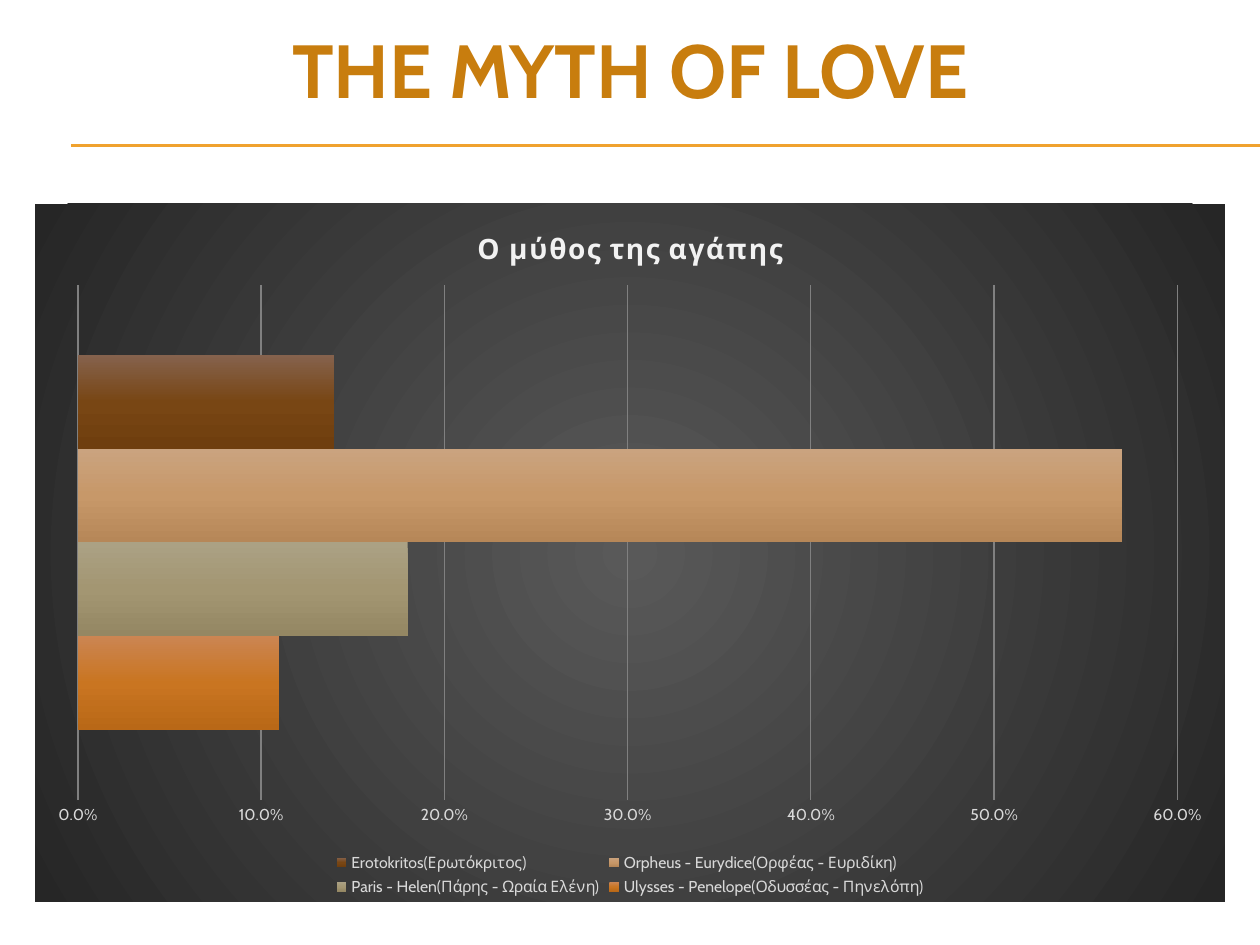
import pptx
import pptx.chart.data
import pptx.dml.color
import pptx.enum.chart
import pptx.enum.shapes
import pptx.enum.text
import pptx.oxml
import pptx.oxml.ns
import pptx.util

PX = 914400 / 126
FONT = "Cabin"
COLORS = {
    "title": "C87D0E", "title_outline": "563928", "rule": "F0A22E",
    "chart_title": "F2F2F2", "label": "D9D9D9", "grid": "808080",
    "panel_center": "595959", "panel_edge": "262626",
}
SERIES = [
    ("Ulysses - Penelope(Οδυσσέας - Πηνελόπη)", 0.11, ("CB8552", "C97521", "B96817")),
    ("Paris - Helen(Πάρης - Ωραία Ελένη)", 0.18, ("ABA184", "A39672", "948763")),
    ("Orpheus - Eurydice(Ορφέας - Ευριδίκη)", 0.57, ("CAA37F", "C79869", "B68758")),
    ("Erotokritos(Ερωτόκριτος)", 0.14, ("85624D", "784614", "6F3E0E")),
]
LINEAR = '<a:lin ang="5400000" scaled="0"/>'
CIRCLE = '<a:path path="circle"><a:fillToRect l="50000" t="50000" r="50000" b="50000"/></a:path>'
NAMESPACES = pptx.oxml.ns.nsdecls("a", "c")


def px(length):
    return pptx.util.Emu(round(length * PX))


def rgb(name):
    return pptx.dml.color.RGBColor.from_string(COLORS[name])


def gradient_xml(colors, direction):
    """Return a gradient fill with evenly spaced stops."""
    step = 100000 // (len(colors) - 1)
    stops = "".join(
        f'<a:gs pos="{index * step}"><a:srgbClr val="{color}"/></a:gs>'
        for index, color in enumerate(colors))
    return f'<a:gradFill {NAMESPACES} rotWithShape="1"><a:gsLst>{stops}</a:gsLst>{direction}</a:gradFill>'


def style_font(font, size, color, bold=False):
    font.name = FONT
    font.size = pptx.util.Pt(size)
    font.bold = bold
    font.color.rgb = rgb(color)


def add_title(slide, text):
    title = slide.shapes.title
    title.left, title.top, title.width, title.height = px(0), px(17), px(1260), px(103)
    frame = title.text_frame
    frame.word_wrap = True
    frame.vertical_anchor = pptx.enum.text.MSO_ANCHOR.MIDDLE
    paragraph = frame.paragraphs[0]
    paragraph.alignment = pptx.enum.text.PP_ALIGN.CENTER
    run = paragraph.add_run()
    run.text = text
    style_font(run.font, 43, "title", bold=True)
    outline = pptx.oxml.parse_xml(
        f'<a:ln {NAMESPACES} w="12700"><a:solidFill>'
        f'<a:srgbClr val="{COLORS["title_outline"]}"/></a:solidFill></a:ln>')
    run.font._element.insert(0, outline)


def add_rule(slide, y):
    rule = slide.shapes.add_connector(
        pptx.enum.shapes.MSO_CONNECTOR.STRAIGHT, px(71), px(y), px(1260), px(y))
    rule.line.color.rgb = rgb("rule")
    rule.line.width = pptx.util.Pt(0.75)
    rule._element.spPr.append(pptx.oxml.parse_xml(f"<a:effectLst {NAMESPACES}/>"))


def style_chart_title(chart, text):
    chart.has_title = True
    run = chart.chart_title.text_frame.paragraphs[0].add_run()
    run.text = text
    style_font(run.font, 16, "chart_title", bold=True)
    run.font._element.set("spc", "100")
    chart.chart_title.include_in_layout = False


def style_axes(chart):
    chart.category_axis.visible = False
    axis = chart.value_axis
    axis.minimum_scale, axis.maximum_scale, axis.major_unit = 0, 0.6, 0.1
    axis.major_tick_mark = pptx.enum.chart.XL_TICK_MARK.NONE
    axis.format.line.fill.background()
    axis.major_gridlines.format.line.color.rgb = rgb("grid")
    axis.major_gridlines.format.line.width = pptx.util.Pt(0.75)
    axis.tick_labels.number_format = "0.0%"
    axis.tick_labels.number_format_is_linked = False
    style_font(axis.tick_labels.font, 9, "label")


def style_panel(chart):
    """Fill the chart area with a radial gradient and fix the plot position."""
    chart_element = chart._chartSpace.chart
    fill = gradient_xml((COLORS["panel_center"], COLORS["panel_edge"]), CIRCLE)
    chart_element.addnext(pptx.oxml.parse_xml(
        f"<c:spPr {NAMESPACES}>{fill}<a:ln><a:noFill/></a:ln></c:spPr>"))
    plot_area = chart_element.plotArea
    for layout in plot_area.findall(pptx.oxml.ns.qn("c:layout")):
        plot_area.remove(layout)
    plot_area.insert(0, pptx.oxml.parse_xml(
        f'<c:layout {NAMESPACES}><c:manualLayout><c:layoutTarget val="inner"/>'
        '<c:xMode val="edge"/><c:yMode val="edge"/><c:x val="0.036"/><c:y val="0.116"/>'
        '<c:w val="0.924"/><c:h val="0.738"/></c:manualLayout></c:layout>'))


def add_bar_chart(slide):
    data = pptx.chart.data.CategoryChartData(number_format="0.0%")
    data.categories = ["1"]
    for name, value, _ in SERIES:
        data.add_series(name, [value])
    chart = slide.shapes.add_chart(
        pptx.enum.chart.XL_CHART_TYPE.BAR_CLUSTERED,
        px(35), px(204), px(1190), px(698), data).chart
    style_font(chart.font, 10, "label")
    style_chart_title(chart, "Ο μύθος της αγάπης")
    style_axes(chart)
    chart.has_legend = True
    chart.legend.position = pptx.enum.chart.XL_LEGEND_POSITION.BOTTOM
    chart.legend.include_in_layout = False
    style_font(chart.legend.font, 9, "label")
    plot = chart.plots[0]
    plot.vary_by_categories = False
    plot.gap_width = 150
    plot.overlap = 0
    for series, (_, _, colors) in zip(plot.series, SERIES):
        fill = pptx.oxml.parse_xml(gradient_xml(colors, LINEAR))
        series._element.get_or_add_spPr().append(fill)
    style_panel(chart)


def main():
    presentation = pptx.Presentation()
    presentation.slide_width, presentation.slide_height = px(1260), px(945)
    slide = presentation.slides.add_slide(presentation.slide_layouts[5])
    for y in (145, 146):
        add_rule(slide, y)
    add_title(slide, "THE MYTH OF LOVE")
    add_bar_chart(slide)
    presentation.save("out.pptx")


if __name__ == "__main__":
    main()
